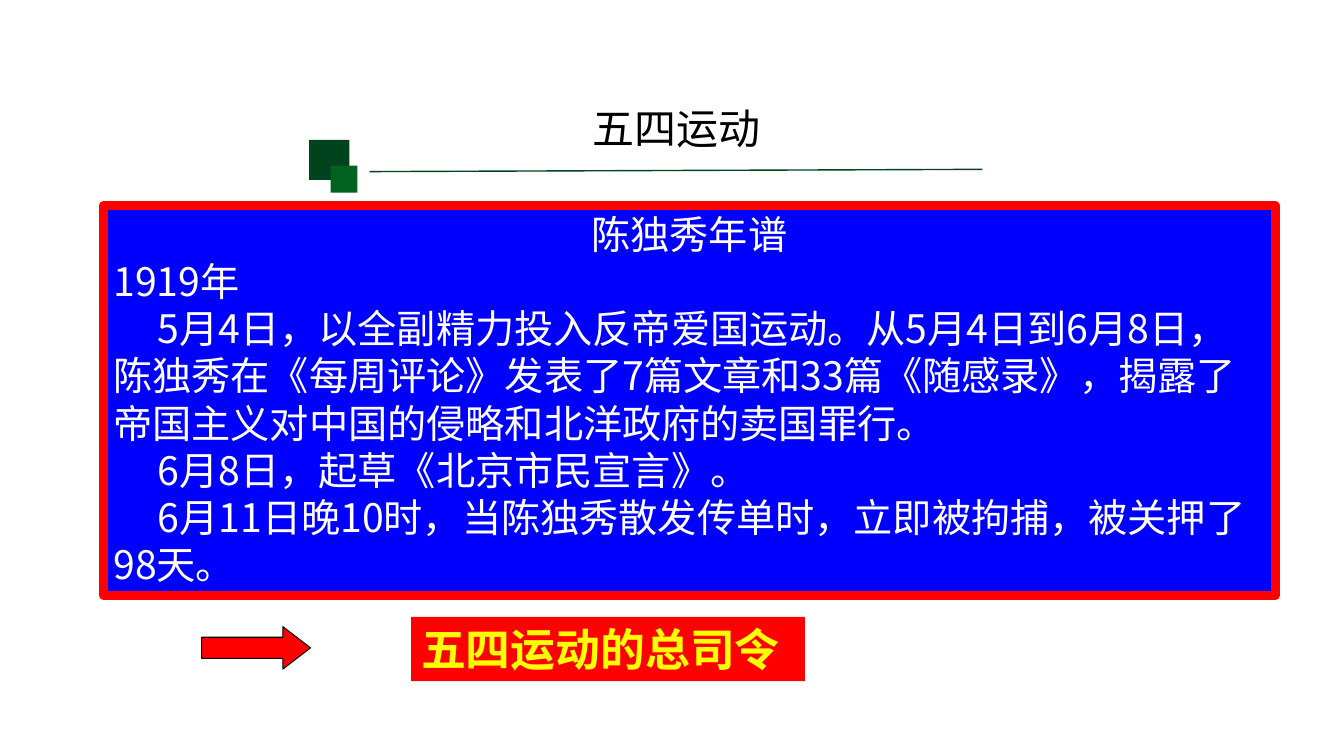
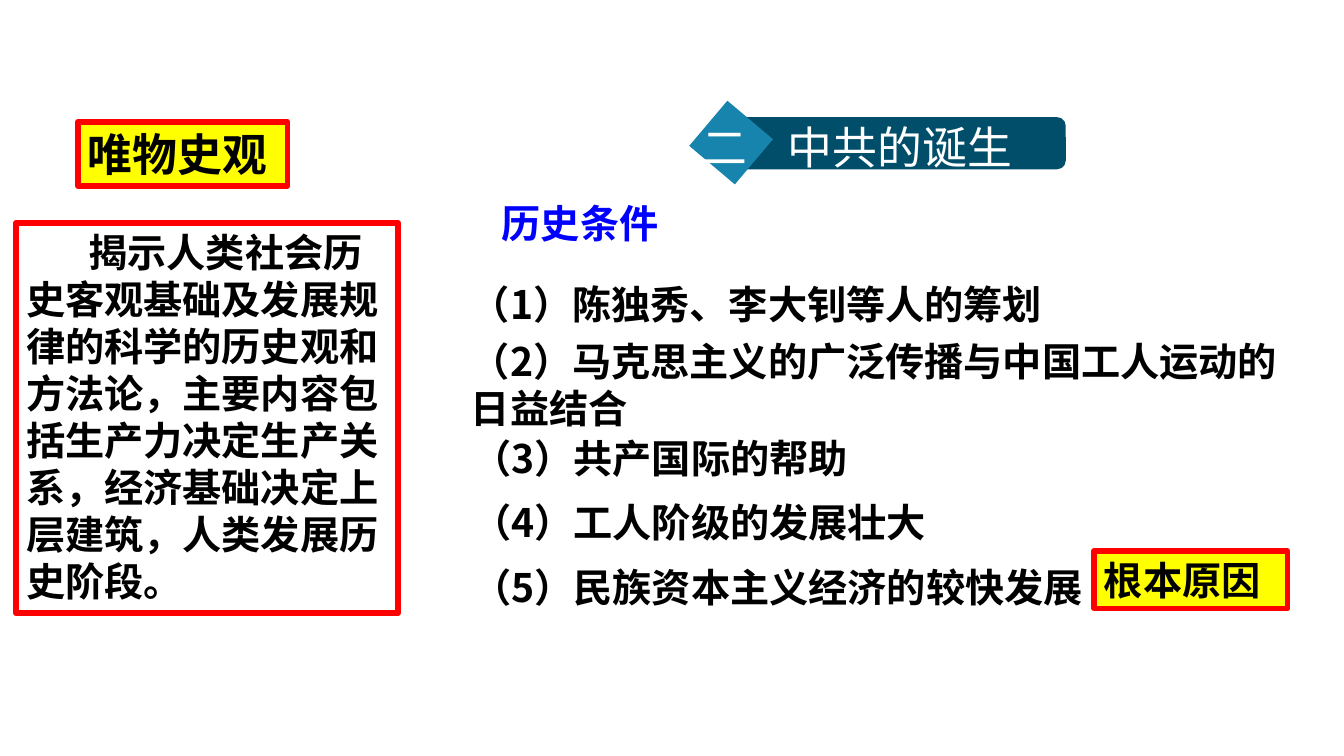
from lxml import etree
from pptx import Presentation
from pptx.dml.color import RGBColor
from pptx.enum.shapes import MSO_CONNECTOR, MSO_SHAPE
from pptx.enum.text import MSO_ANCHOR, MSO_AUTO_SIZE, PP_ALIGN
from pptx.oxml.ns import qn
from pptx.util import Inches, Pt

RECT = MSO_SHAPE.RECTANGLE
ROUND_RECT = MSO_SHAPE.ROUNDED_RECTANGLE
ARROW = MSO_SHAPE.RIGHT_ARROW
STRAIGHT = MSO_CONNECTOR.STRAIGHT
LEFT, CENTER = PP_ALIGN.LEFT, PP_ALIGN.CENTER
TOP = MSO_ANCHOR.TOP
GROW = MSO_AUTO_SIZE.SHAPE_TO_FIT_TEXT

BLACK = RGBColor(0, 0, 0)
WHITE = RGBColor(255, 255, 255)
RED = RGBColor(255, 0, 0)
YELLOW = RGBColor(255, 255, 0)
BLUE = RGBColor(0, 0, 255)
DARK_GREEN = RGBColor(0x01, 0x43, 0x1D)
GREEN = RGBColor(0x01, 0x62, 0x1F)
NAVY = RGBColor(0x01, 0x4E, 0x6A)
TEAL = RGBColor(0x17, 0x84, 0xAD)

FONT = "Noto Sans CJK SC"
BODY, LABEL = 28, 32
TITLE_ONLY = 5


class SlideBuilder:
    """Holds the style and the current slide; places are percent of the slide."""

    def __init__(self):
        self.deck = Presentation()
        self.deck.slide_width, self.deck.slide_height = Inches(13.33), Inches(7.5)
        self.page = None

    def new_page(self):
        self.page = self.deck.slides.add_slide(self.deck.slide_layouts[TITLE_ONLY])

    def place(self, *shares):
        sides = (self.deck.slide_width, self.deck.slide_height) * 2
        return [round(side * share / 100) for side, share in zip(sides, shares)]

    def fill_text(self, shape, texts, size=BODY, color=BLACK, bold=False,
                  align=LEFT, indent=0, tab=0):
        """Fill a shape with (text, alignment, indent) or plain text paragraphs."""
        frame = shape.text_frame
        frame.word_wrap = True
        frame.auto_size = GROW
        frame.vertical_anchor = TOP
        for index, text in enumerate(texts):
            words, side, inset = text if isinstance(text, tuple) else (text, align, indent)
            para = frame.add_paragraph() if index else frame.paragraphs[0]
            para.alignment = side
            props = para._p.get_or_add_pPr()
            if inset:
                props.set("indent", str(Inches(inset)))
            if tab:
                stops = etree.SubElement(props, qn("a:tabLst"))
                etree.SubElement(stops, qn("a:tab"), pos=str(Inches(tab)), algn="l")
            span = para.add_run()
            span.text = words
            font = span.font
            font.name, font.size, font.bold = FONT, Pt(size), bold
            font.color.rgb = color
            etree.SubElement(span._r.get_or_add_rPr(), qn("a:ea"), typeface=FONT)

    def title(self, at, text, **style):
        title = self.page.shapes.title
        title.left, title.top, title.width, title.height = self.place(*at)
        self.page.shapes.element.append(title.element)  # bring to the front
        self.fill_text(title, [text], **style)

    def shape(self, at, fill, kind=RECT, line=None, weight=0, turn=0):
        shape = self.page.shapes.add_shape(kind, *self.place(*at))
        shape.shadow.inherit = False
        shape.rotation = turn
        shape.fill.solid()
        shape.fill.fore_color.rgb = fill
        if line is None:
            shape.line.fill.background()
        else:
            shape.line.color.rgb = line
            shape.line.width = Pt(weight)
        return shape

    def panel(self, at, texts, fill, line=None, weight=0, **style):
        self.fill_text(self.shape(at, fill, line=line, weight=weight), texts, **style)

    def text(self, at, text, **style):
        self.fill_text(self.page.shapes.add_textbox(*self.place(*at)), [text], **style)

    def rule(self, ends, color, weight):
        line = self.page.shapes.add_connector(STRAIGHT, *self.place(*ends))
        line.line.color.rgb = color
        line.line.width = Pt(weight)
        etree.SubElement(line.element.spPr, qn("a:effectLst"))


def movement_page(show):
    show.new_page()
    # Chronicle
    show.panel((7.7, 27.2, 87.2, 51.6), [
        ("陈独秀年谱", CENTER, 0),
        ("1919年", LEFT, 0),
        "5月4日，以全副精力投入反帝爱国运动。从5月4日到6月8日，陈独秀在《每周评论》发表了7篇文章和33篇《随感录》，揭露了帝国主义对中国的侵略和北洋政府的卖国罪行。",
        "6月8日，起草《北京市民宣言》。",
        "6月11日晚10时，当陈独秀散发传单时，立即被拘捕，被关押了98天。",
    ], BLUE, RED, 6, color=WHITE, indent=0.44)
    # Conclusion
    arrow = show.shape((15, 82.9, 8.1, 5.6), RED, ARROW, BLACK, 0.75)
    arrow.adjustments[1] = 0.65
    show.panel((30.6, 81.6, 29.3, 8.5), ["五四运动的总司令"], RED,
               size=LABEL, color=YELLOW, bold=True)
    # Title with its ornament
    show.rule((27.5, 22.7, 73.1, 22.4), DARK_GREEN, 1)
    show.shape((23, 18.5, 3, 5.3), DARK_GREEN)
    show.shape((24.6, 21.9, 2, 3.6), GREEN)
    show.title((27.5, 12.9, 45.6, 8.1), "五四运动", size=30, align=CENTER)


def party_page(show):
    show.new_page()
    # Definition on the left
    show.panel((1.2, 29.5, 28.4, 51.6), [
        "揭示人类社会历史客观基础及发展规律的科学的历史观和方法论，主要内容包括生产力决定生产关系，经济基础决定上层建筑，人类发展历史阶段。",
    ], WHITE, RED, 4.5, bold=True, indent=0.62)
    show.panel((5.8, 16.1, 15.6, 8.5), ["唯物史观"], YELLOW, RED, 4,
               size=LABEL, bold=True)
    # Conditions on the right
    show.text((36.6, 25.7, 38.8, 7.6), "历史条件", color=BLUE, bold=True)
    conditions = [
        (34.3, 36.4, 48.3, "陈独秀、李大钊等人的筹划"),
        (34.3, 43.9, 64.2, "马克思主义的广泛传播与中国工人运动的日益结合"),
        (34.4, 56.8, 36.5, "共产国际的帮助"),
        (34.4, 65.3, 38.8, "工人阶级的发展壮大"),
        (34.4, 73.8, 47, "民族资本主义经济的较快发展"),
    ]
    for number, (left, top, width, words) in enumerate(conditions, 1):
        show.text((left, top, width, 7.6), f"（{number}）{words}", bold=True)
    show.panel((81.4, 72.9, 14.4, 7.6), ["根本原因"], YELLOW, RED, 4, bold=True)
    # Title on its ribbon
    show.shape((53.9, 15.5, 25.4, 6.9), NAVY, ROUND_RECT)
    show.shape((52.2, 14.9, 4.4, 7.9), TEAL, turn=310.2)
    show.title((51.5, 15.1, 38.7, 8.5), "二\t中共的诞生",
               size=LABEL, color=WHITE, tab=0.85)


def main():
    show = SlideBuilder()
    movement_page(show)
    party_page(show)
    show.deck.save("out.pptx")


if __name__ == "__main__":
    main()
